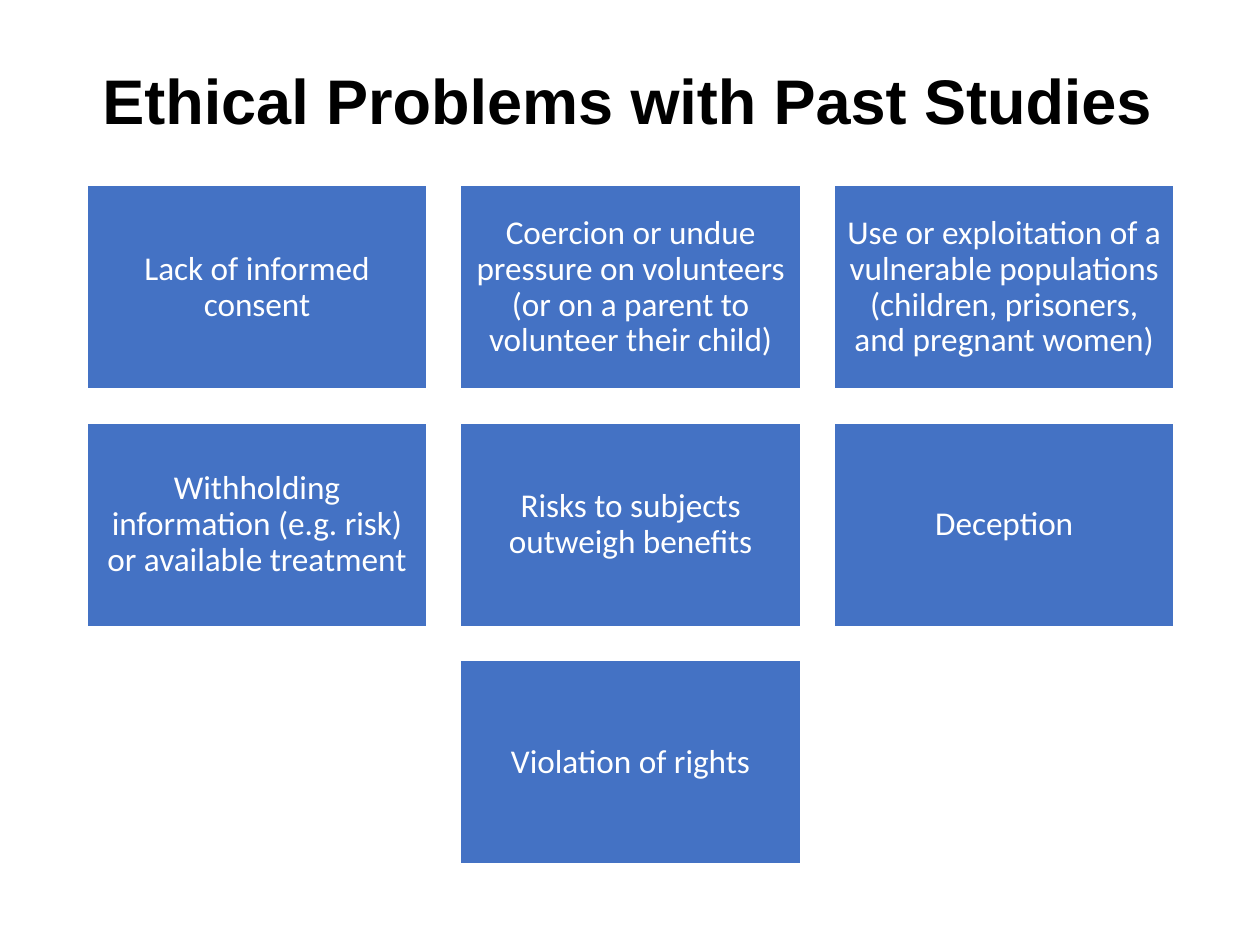
from pptx import Presentation
from pptx.dml.color import RGBColor
from pptx.enum.shapes import MSO_SHAPE
from pptx.enum.text import MSO_ANCHOR, PP_ALIGN
from pptx.util import Inches, Pt

BLUE = RGBColor(0x44, 0x72, 0xC4)
WHITE = RGBColor(0xFF, 0xFF, 0xFF)
BLACK = RGBColor(0x00, 0x00, 0x00)

# Card grid, in inches
COLUMNS = 3
LEFT, TOP = 0.69, 1.47
CARD_WIDTH, CARD_HEIGHT = 2.7, 1.62
GAP = 0.265
INSET = 0.08

PROBLEMS = [
    "Lack of informed consent",
    "Coercion or undue pressure on volunteers (or on a parent to volunteer their child)",
    "Use or exploitation of a vulnerable populations (children, prisoners, and pregnant women)",
    "Withholding information (e.g. risk) or available treatment",
    "Risks to subjects outweigh benefits",
    "Deception",
    "Violation of rights",
]


def write_centred(shape, text, font_name, size, color, bold=False):
    frame = shape.text_frame
    frame.word_wrap = True
    frame.vertical_anchor = MSO_ANCHOR.MIDDLE
    paragraph = frame.paragraphs[0]
    paragraph.alignment = PP_ALIGN.CENTER
    paragraph.line_spacing = 0.9
    run = paragraph.add_run()
    run.text = text
    run.font.name = font_name
    run.font.size = Pt(size)
    run.font.bold = bold
    run.font.color.rgb = color


presentation = Presentation()
presentation.slide_width = Inches(10)
presentation.slide_height = Inches(7.5)
slide = presentation.slides.add_slide(presentation.slide_layouts[6])

# Title
title = slide.shapes.add_textbox(Inches(0.67), Inches(0.26), Inches(8.62), Inches(1.13))
write_centred(title, "Ethical Problems with Past Studies", "Arial", 36, BLACK, bold=True)

# Cards, with a short last row centred under the others
for index, problem in enumerate(PROBLEMS):
    row, column = divmod(index, COLUMNS)
    cards_in_row = min(COLUMNS, len(PROBLEMS) - row * COLUMNS)
    column += (COLUMNS - cards_in_row) / 2
    card = slide.shapes.add_shape(
        MSO_SHAPE.RECTANGLE,
        Inches(LEFT + column * (CARD_WIDTH + GAP)),
        Inches(TOP + row * (CARD_HEIGHT + GAP)),
        Inches(CARD_WIDTH),
        Inches(CARD_HEIGHT),
    )
    card.shadow.inherit = False
    card.fill.solid()
    card.fill.fore_color.rgb = BLUE
    card.line.color.rgb = WHITE
    card.line.width = Pt(1)
    frame = card.text_frame
    frame.margin_left = frame.margin_right = Inches(INSET)
    frame.margin_top = frame.margin_bottom = Inches(INSET)
    write_centred(card, problem, "Calibri", 19, WHITE)

presentation.save("out.pptx")
